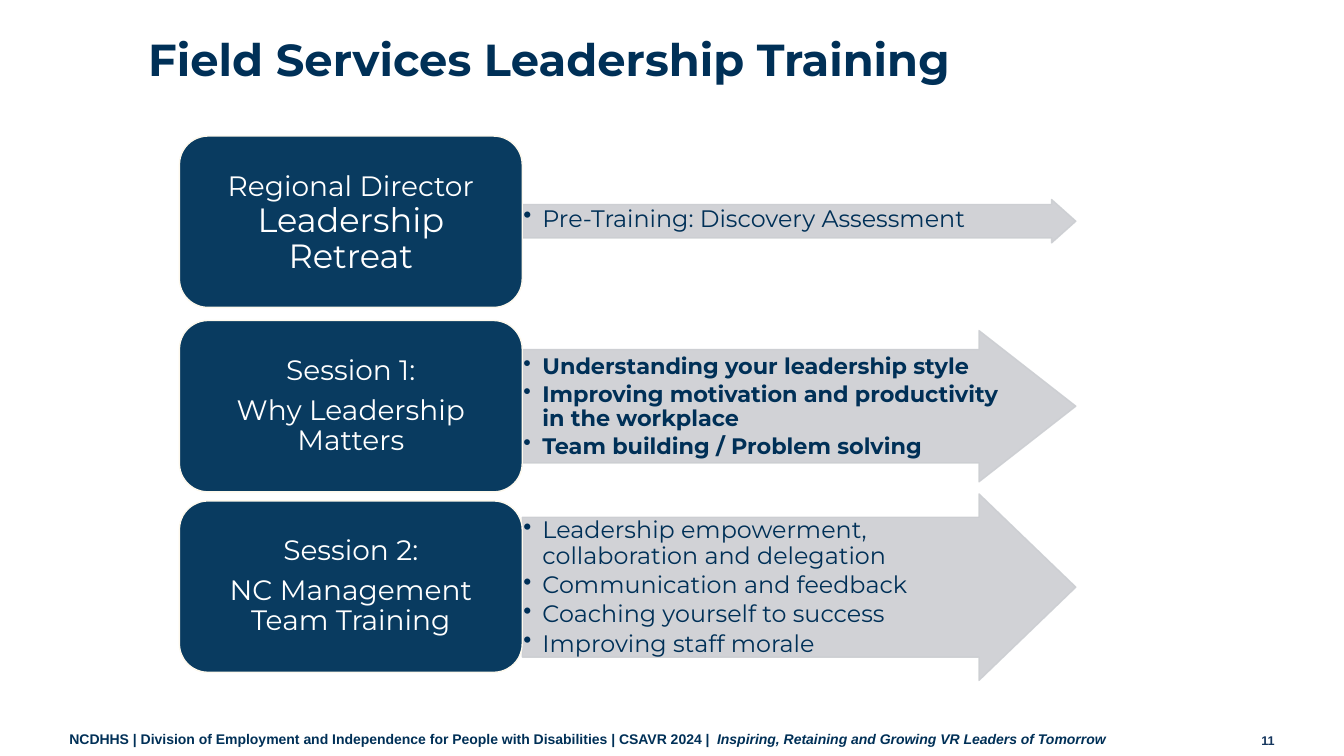
"""Build the Field Services Leadership Training slide."""
from lxml import etree
from pptx import Presentation
from pptx import util as u
from pptx.dml.color import RGBColor
from pptx.enum import shapes, text
from pptx.oxml import ns

NAVY = RGBColor(0x00, 0x30, 0x57)
DEEP = RGBColor(0x09, 0x3B, 0x60)
CREAM = RGBColor(0xFE, 0xF9, 0xED)
GREY = RGBColor(0xCC, 0xCE, 0xD2)
WHITE = RGBColor(0xFF, 0xFF, 0xFF)
SLATE = RGBColor(0x15, 0x36, 0x5E)
FONT = "Montserrat"
ALIGN = text.PP_ALIGN
MID = text.MSO_ANCHOR.MIDDLE
TOP = text.MSO_ANCHOR.TOP


def write(shape, paras, anchor, pads, form, bullet=False):
    """Fill a shape with paragraphs of (words, font values) runs."""
    frame = shape.text_frame
    frame.word_wrap = True
    frame.vertical_anchor = anchor
    for side, pad in zip(("left", "top", "right", "bottom"), pads):
        setattr(frame, "margin_" + side, u.Inches(pad))
    for n, runs in enumerate(paras):
        para = frame.paragraphs[0] if n == 0 else frame.add_paragraph()
        for key, value in form.items():
            setattr(para, key, value)
        if bullet:
            props = para._p.get_or_add_pPr()
            props.set("marL", str(u.Inches(0.19)))
            props.set("indent", str(-u.Inches(0.19)))
            etree.SubElement(props, ns.qn("a:buChar")).set("char", "•")
        for words, look in runs:
            run = para.add_run()
            run.text = words
            for key, value in look.items():
                if key == "color":
                    run.font.color.rgb = value
                else:
                    setattr(run.font, key, value)


def draw(kind, box, fill, line):
    """Add a preset shape with a plain fill and a thin outline."""
    shape = slide.shapes.add_shape(kind, *map(u.Inches, box))
    shape.shadow.inherit = False
    shape.fill.solid()
    shape.fill.fore_color.rgb = fill
    shape.line.color.rgb = line
    shape.line.width = u.Pt(1)
    return shape


deck = Presentation()
deck.slide_width = u.Inches(13.33)
deck.slide_height = u.Inches(7.5)
slide = deck.slides.add_slide(deck.slide_layouts[5])

title = slide.shapes.title
title.left, title.top, title.width, title.height = map(u.Inches, (1.37, 0.34, 10.88, 0.55))
head = dict(name=FONT, size=u.Pt(32), bold=True, color=NAVY)
write(title, [[("Field Services Leadership Training", head)]], MID, (0.1, 0.05, 0.1, 0.05),
      dict(alignment=ALIGN.LEFT, line_spacing=0.9))

foot = dict(name="Arial", size=u.Pt(10), bold=True, color=NAVY)
org = "NCDHHS | Division of Employment and Independence for People with Disabilities | CSAVR 2024 |"
motto = "\u00a0 Inspiring, Retaining and Growing VR Leaders of Tomorrow"
notes = [
    ((0.59, 7.2, 11.77, 0.29), [(org, foot), (motto, {**foot, "italic": True})], ALIGN.LEFT),
    ((12.15, 7.22, 0.59, 0.3), [("11", {**foot, "size": u.Pt(9), "color": SLATE})], ALIGN.RIGHT),
]
for box, runs, side in notes:
    note = slide.shapes.add_textbox(*map(u.Inches, box))
    write(note, [runs], TOP, (0.1, 0.05, 0.1, 0.05), dict(alignment=side))

label = dict(name=FONT, size=u.Pt(20), color=WHITE)
large = {**label, "size": u.Pt(24)}
point = dict(name=FONT, size=u.Pt(17), color=NAVY)
strong = {**point, "size": u.Pt(16), "bold": True}

rows = [
    dict(top=1.35, label=[[("Regional Director", label), (" Leadership Retreat", large)]],
         arrow=(1.98, 0.43), shaft=0.77, tip=0.24, pad=0.02, look=point,
         points=["Pre-Training: Discovery Assessment"]),
    dict(top=3.18, label=[[("Session 1:", label)], [("Why Leadership Matters", label)]],
         arrow=(3.28, 1.5), shaft=0.75, tip=0.96, pad=0.06, look=strong,
         points=["Understanding your leadership style",
                 "Improving motivation and productivity in the workplace",
                 "Team building / Problem solving"]),
    dict(top=4.97, label=[[("Session 2:", label)], [("NC Management Team Training", label)]],
         arrow=(4.9, 1.85), shaft=0.75, tip=0.96, pad=0.01, look=point,
         points=["Leadership empowerment, collaboration and delegation",
                 "Communication and feedback",
                 "Coaching yourself to success",
                 "Improving staff morale"]),
]
for row in rows:
    top, high = row["arrow"]
    arrow = draw(shapes.MSO_SHAPE.RIGHT_ARROW, (5.18, top, 5.49, high), GREY, GREY)
    arrow.adjustments[0] = row["shaft"]
    arrow.adjustments[1] = row["tip"] / high
    for tint in arrow._element.spPr.iter(ns.qn("a:srgbClr")):
        etree.SubElement(tint, ns.qn("a:alpha")).set("val", "90000")
    write(arrow, [[(words, row["look"])] for words in row["points"]], TOP,
          (0.01, row["pad"], 0, 0),
          dict(alignment=ALIGN.LEFT, line_spacing=0.9, space_after=u.Pt(2.5)), bullet=True)
    card = draw(shapes.MSO_SHAPE.ROUNDED_RECTANGLE, (1.78, row["top"], 3.4, 1.7), DEEP, CREAM)
    write(card, row["label"], MID, (0.13, 0.07, 0.13, 0.07),
          dict(alignment=ALIGN.CENTER, line_spacing=0.9, space_after=u.Pt(7)))

deck.save("out.pptx")
